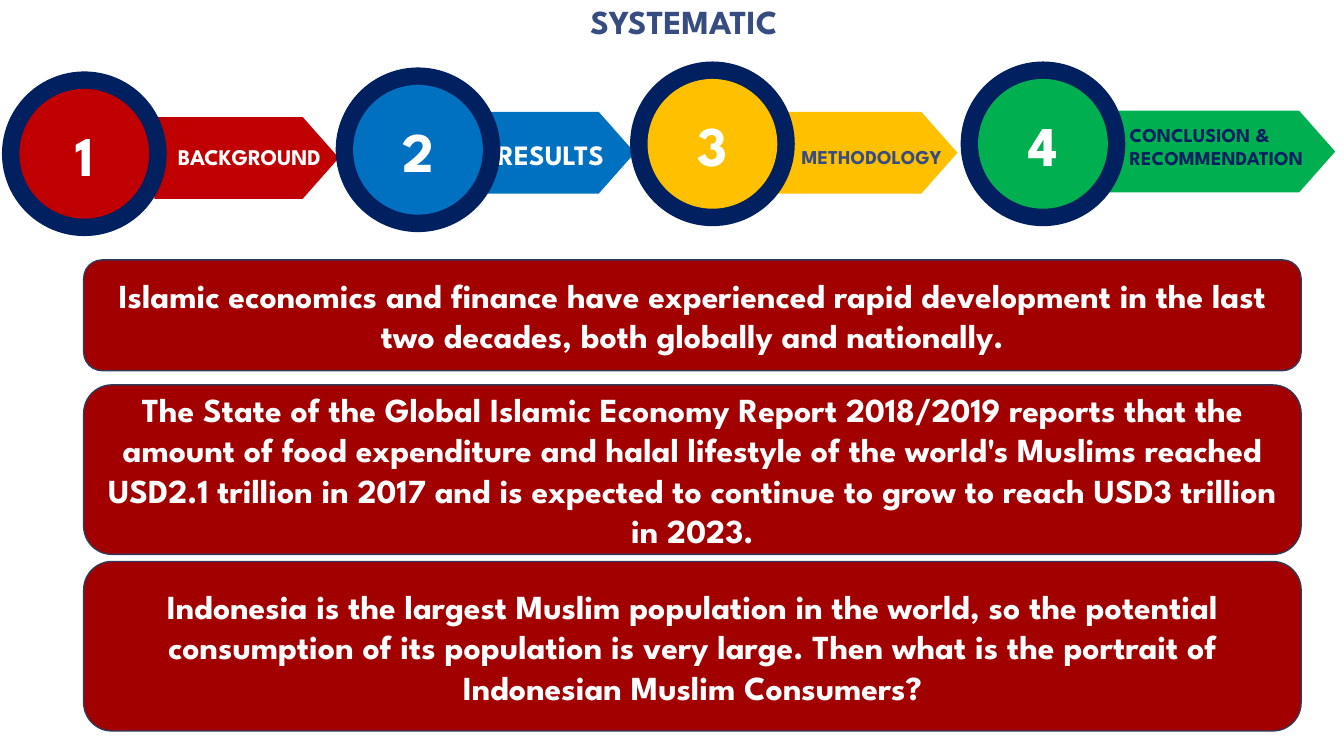
from collections import namedtuple
from dataclasses import dataclass

from pptx import Presentation, util as u
from pptx.dml.color import RGBColor
from pptx.enum import shapes, text

Cm = u.Cm
Box = namedtuple("Box", "left top width height")
Step = namedtuple("Step", "box color arrow_dx arrow_dy label label_box size ink")


@dataclass(frozen=True)
class Theme:
    font: str = "League Spartan"
    navy: str = "002060"
    slate: str = "374C81"
    edge: str = "303A58"
    card: str = "A20000"
    red: str = "C00000"
    blue: str = "0070C0"
    yellow: str = "FFC000"
    green: str = "00B050"
    white: str = "FFFFFF"
    body: int = 24
    number: int = 40
    label_large: int = 20
    label: int = 16
    label_small: int = 14


T = Theme()
CENTER, LEFT = text.PP_ALIGN.CENTER, text.PP_ALIGN.LEFT
MIDDLE = text.MSO_ANCHOR.MIDDLE
MSO = shapes.MSO_SHAPE

RING = 4.15
DISC = 3.27
ARROW_HEIGHT = 2.06

# Each label box is measured from the top left of its step.
STEPS = [
    Step(Box(0.05, 1.8, 8.49, RING), T.red, 3.84, 1.15,
         "BACKGROUND", Box(3.91, 1.68, 4.65, 0.94), T.label, T.white),
    Step(Box(8.46, 1.7, 7.54, RING), T.blue, 3.53, 1.12,
         "RESULTS", Box(3.81, 1.63, 3.23, 1.12), T.label_large, T.white),
    Step(Box(15.88, 1.55, 8.25, RING), T.yellow, 3.63, 1.27,
         "METHODOLOGY", Box(3.78, 1.98, 4.62, 0.86), T.label_small, T.slate),
    Step(Box(24.21, 1.55, 9.44, RING), T.green, 3.45, 1.24,
         "CONCLUSION & RECOMMENDATION", Box(4.01, 1.42, 5.44, 1.45), T.label_small, T.navy),
]

CARDS = [
    (Box(2.11, 6.55, 30.68, 2.79),
     "Islamic economics and finance have experienced rapid development in the last "
     "two decades, both globally and nationally."),
    (Box(2.11, 9.7, 30.68, 4.27),
     "The State of the Global Islamic Economy Report 2018/2019 reports that the amount "
     "of food expenditure and halal lifestyle of the world's Muslims reached USD2.1 "
     "trillion in 2017 and is expected to continue to grow to reach USD3 trillion in 2023."),
    (Box(2.11, 14.15, 30.68, 4.27),
     "Indonesia is the largest Muslim population in the world, so the potential "
     "consumption of its population is very large. Then what is the portrait of "
     "Indonesian Muslim Consumers?"),
]


def lengths(box):
    return [Cm(v) for v in box]


def write(tf, words, size, color, align=CENTER):
    tf.word_wrap = True
    p = tf.paragraphs[0]
    p.alignment = align
    r = p.add_run()
    r.text = words
    r.font.name = T.font
    r.font.size = u.Pt(size)
    r.font.bold = True
    r.font.color.rgb = RGBColor.from_string(color)
    return p


def add_filled(parent, kind, box, fill, line=None):
    """Add a flat preset shape, outlined only when a line colour is given."""
    sp = parent.shapes.add_shape(kind, *lengths(box))
    sp.shadow.inherit = False
    sp.fill.solid()
    sp.fill.fore_color.rgb = RGBColor.from_string(fill)
    if line:
        sp.line.color.rgb = RGBColor.from_string(line)
        sp.line.width = u.Pt(1)
    else:
        sp.line.fill.background()
    return sp


def add_title(s, box, words):
    sp = s.shapes.title
    sp.left, sp.top, sp.width, sp.height = lengths(box)
    tf = sp.text_frame
    tf.auto_size = text.MSO_AUTO_SIZE.NONE
    tf.vertical_anchor = text.MSO_ANCHOR.BOTTOM
    tf.margin_left = tf.margin_right = Cm(0.33)
    tf.margin_top = tf.margin_bottom = Cm(0.18)
    write(tf, words, T.body, T.slate).line_spacing = 0.85


def add_step(s, number, step):
    """Draw an arrow with its label, starting from a numbered disc."""
    left, top, width, height = step.box
    arrow = add_filled(s, MSO.PENTAGON, Box(left + step.arrow_dx, top + step.arrow_dy,
                                            width - step.arrow_dx, ARROW_HEIGHT), step.color)
    arrow.adjustments[0] = 0.442

    dx, dy, label_width, label_height = step.label_box
    label = s.shapes.add_textbox(*lengths(Box(left + dx, top + dy, label_width, label_height)))
    align = LEFT if " " in step.label else CENTER
    write(label.text_frame, step.label, step.size, step.ink, align)
    label.text_frame.auto_size = text.MSO_AUTO_SIZE.SHAPE_TO_FIT_TEXT

    badge = s.shapes.add_group_shape()
    add_filled(badge, MSO.OVAL, Box(left, top, height, height), T.navy)
    inset = (height - DISC) / 2
    disc = add_filled(badge, MSO.OVAL, Box(left + inset, top + inset, DISC, DISC), step.color)
    disc.text_frame.vertical_anchor = MIDDLE
    write(disc.text_frame, str(number), T.number, T.white)


def add_card(s, box, words):
    sp = add_filled(s, MSO.ROUNDED_RECTANGLE, box, T.card, T.edge)
    sp.text_frame.vertical_anchor = MIDDLE
    write(sp.text_frame, words, T.body, T.white)


def main():
    prs = Presentation()
    prs.slide_width, prs.slide_height = Cm(33.87), Cm(19.05)
    s = prs.slides.add_slide(prs.slide_layouts.get_by_name("Title Only"))
    add_title(s, Box(0.61, -0.15, 33.25, 1.37), "SYSTEMATIC")
    for number, step in enumerate(STEPS, 1):
        add_step(s, number, step)
    for box, words in CARDS:
        add_card(s, box, words)
    prs.save("out.pptx")


if __name__ == "__main__":
    main()
